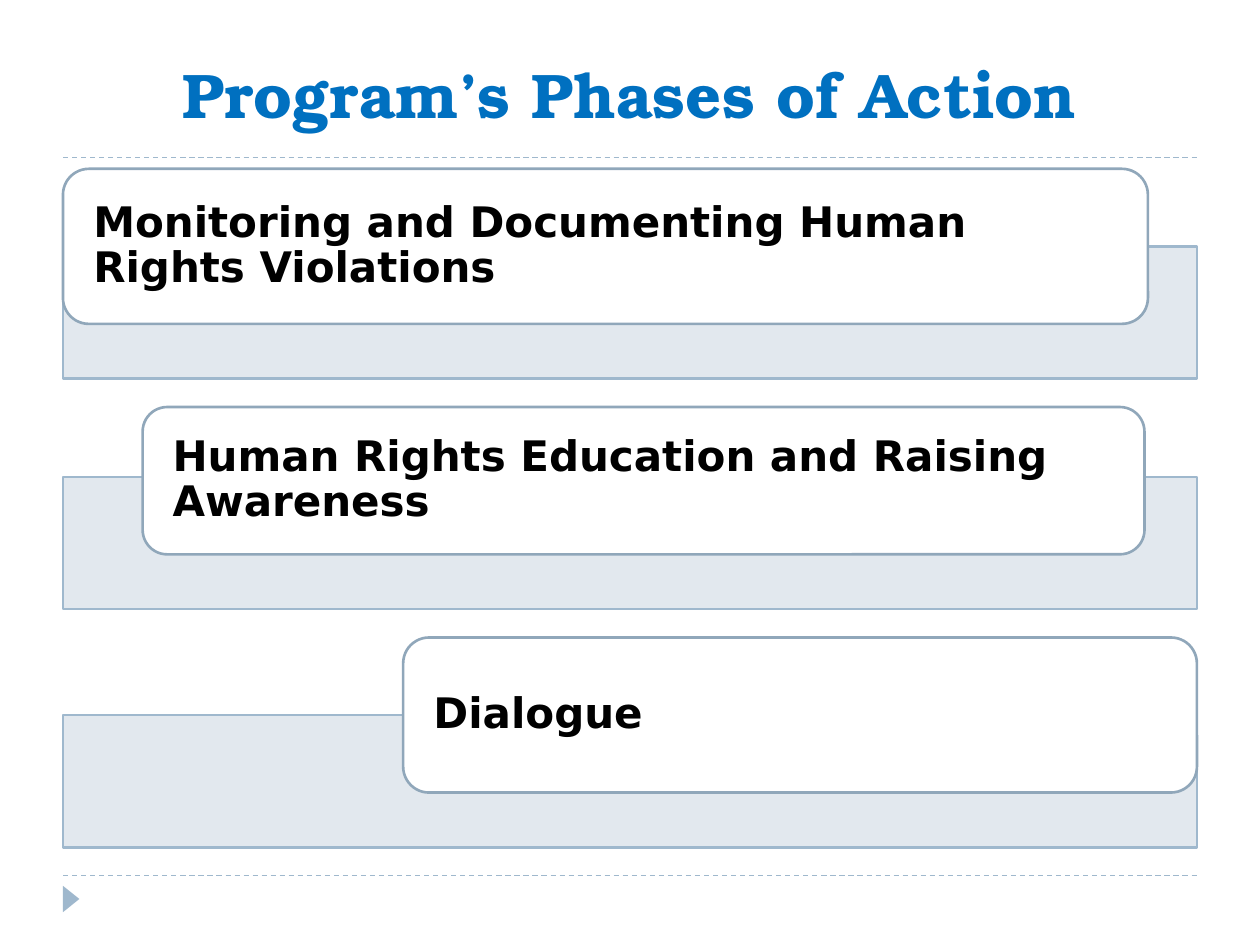
from typing import NamedTuple

from lxml import etree
from pptx import Presentation
from pptx.dml.color import RGBColor
from pptx.enum import dml, shapes, text
from pptx.oxml.ns import qn
from pptx.util import Pt

BLUE = RGBColor(0x00, 0x70, 0xC0)
STEEL = RGBColor(0x9F, 0xB8, 0xCD)
EDGE = RGBColor(0x90, 0xA7, 0xBA)
PALE = RGBColor(0xDF, 0xE6, 0xED)
WHITE = RGBColor(0xFF, 0xFF, 0xFF)
BLACK = RGBColor(0x00, 0x00, 0x00)

LEFT, WIDTH = 36, 648
TOP, BAR, LAP, GAP = 96.5, 75.6, 44.3, 16.2
KIND = shapes.MSO_SHAPE


class Box(NamedTuple):
    x: float
    y: float
    w: float
    h: float


class Phase(NamedTuple):
    label: str
    x: float
    w: float
    h: float


PHASES = [
    Phase("Monitoring and Documenting Human Rights Violations", 36, 620, 88.6),
    Phase("Human Rights Education and Raising Awareness", 81.5, 572.5, 84.2),
    Phase("Dialogue", 230.4, 453.6, 88.6),
]


def put_text(shape, words: str, *, font: str, size: float, color: RGBColor,
             align, anchor, inset: float, edge: float, lines: float = 1) -> None:
    frame = shape.text_frame
    frame.word_wrap = True
    frame.vertical_anchor = anchor
    frame.margin_left = frame.margin_right = Pt(inset)
    frame.margin_top = frame.margin_bottom = Pt(edge)
    para = frame.paragraphs[0]
    para.alignment = align
    para.line_spacing = lines
    run = para.add_run()
    run.text = words
    run.font.name = font
    run.font.size = Pt(size)
    run.font.bold = True
    run.font.color.rgb = color


def add_form(slide, kind, box: Box, fill: RGBColor, line: RGBColor | None = None):
    form = slide.shapes.add_shape(kind, *map(Pt, box))
    form.shadow.inherit = False
    form.fill.solid()
    form.fill.fore_color.rgb = fill
    if line is None:
        form.line.fill.background()
    else:
        form.line.color.rgb = line
        form.line.width = Pt(1.5)
    return form


def add_rule(slide, y: float) -> None:
    rule = slide.shapes.add_connector(
        shapes.MSO_CONNECTOR.STRAIGHT, Pt(LEFT), Pt(y), Pt(LEFT + WIDTH), Pt(y))
    rule.line.color.rgb = STEEL
    rule.line.width = Pt(0.75)
    rule.line.dash_style = dml.MSO_LINE.DASH
    etree.SubElement(rule._element.spPr, qn("a:effectLst"))


def add_phase(slide, phase: Phase, y: float) -> float:
    top = y + phase.h - LAP
    bar = add_form(slide, KIND.RECTANGLE, Box(LEFT, top, WIDTH, BAR), PALE, STEEL)
    tint = bar._element.spPr.find(qn("a:solidFill"))[0]
    etree.SubElement(tint, qn("a:alpha"), val="90000")
    card = add_form(slide, KIND.ROUNDED_RECTANGLE,
                    Box(phase.x, y, phase.w, phase.h), WHITE, EDGE)
    put_text(card, phase.label, font="DejaVu Sans", size=24, color=BLACK,
             align=text.PP_ALIGN.LEFT, anchor=text.MSO_ANCHOR.MIDDLE,
             inset=13, edge=0, lines=0.9)
    return top + BAR + GAP


def main() -> None:
    deck = Presentation()
    deck.slide_width, deck.slide_height = Pt(720), Pt(540)
    slide = deck.slides.add_slide(deck.slide_layouts[6])

    for y in (500.4, 90):
        add_rule(slide, y)
    mark = add_form(slide, KIND.ISOSCELES_TRIANGLE, Box(33.1, 509, 15.1, 9.4), STEEL)
    mark.rotation = 90

    title = slide.shapes.add_textbox(Pt(LEFT), Pt(12.2), Pt(WIDTH), Pt(66.2))
    put_text(title, "Program’s Phases of Action", font="TeX Gyre Bonum", size=36,
             color=BLUE, align=text.PP_ALIGN.CENTER,
             anchor=text.MSO_ANCHOR.BOTTOM, inset=7.2, edge=3.6)

    y = TOP
    for phase in PHASES:
        y = add_phase(slide, phase, y)

    deck.save("out.pptx")


if __name__ == "__main__":
    main()
